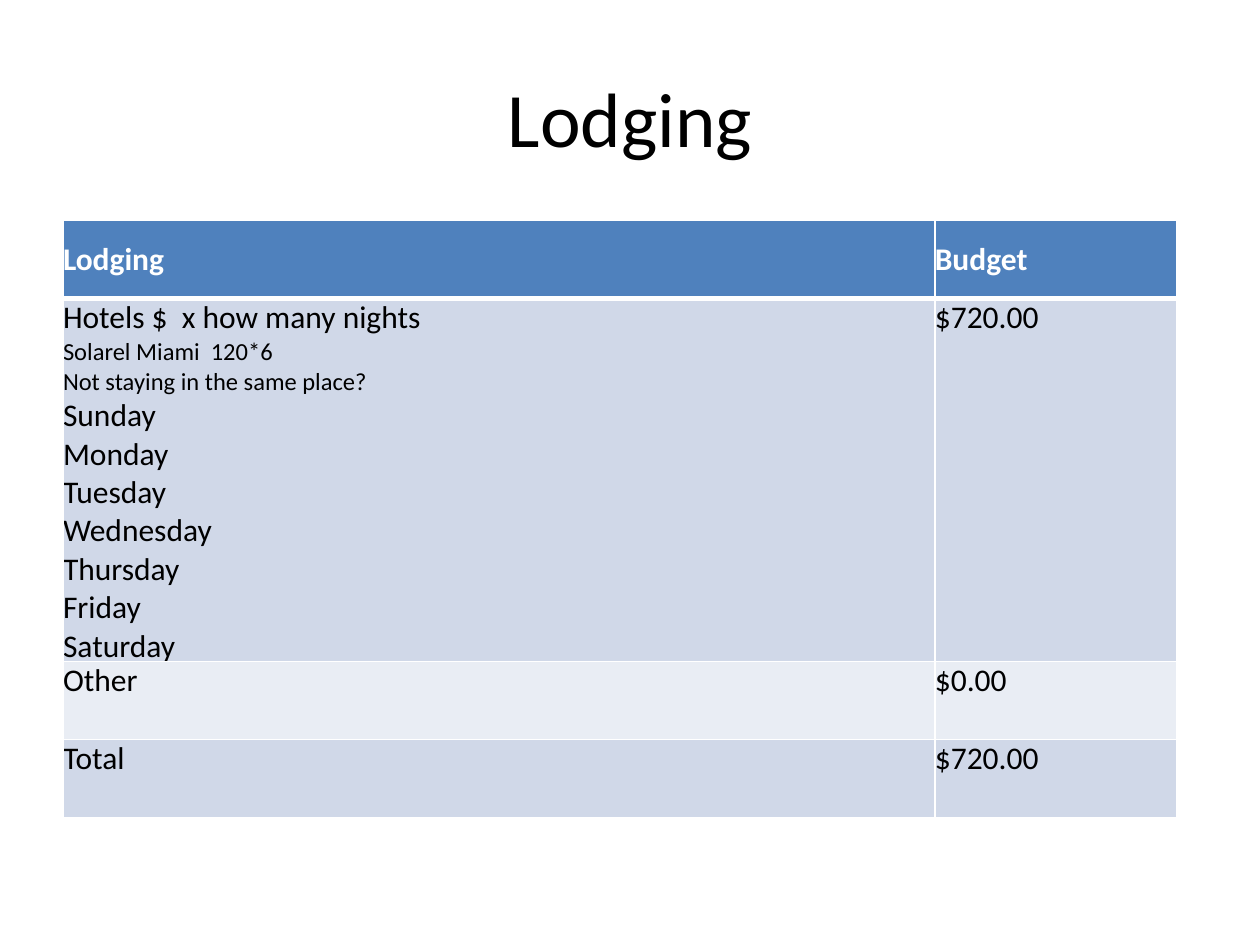
import dataclasses
import typing

import lxml.etree
import pptx
import pptx.dml.color
import pptx.enum.text
import pptx.oxml.ns
import pptx.util

SLIDE_WIDTH = pptx.util.Inches(10)
SLIDE_HEIGHT = pptx.util.Inches(7.5)
COLUMN_WIDTHS = (6.92, 1.92)
ROW_HEIGHT = 0.62
DAYS = ("Sunday", "Monday", "Tuesday", "Wednesday", "Thursday", "Friday", "Saturday")
ANCHOR = pptx.enum.text.MSO_ANCHOR
ALIGN = pptx.enum.text.PP_ALIGN


@dataclasses.dataclass(frozen=True)
class Line:
    text: str
    size: float = 18
    color: str = "000000"
    bold: bool = False
    align: typing.Any = ALIGN.LEFT


@dataclasses.dataclass(frozen=True)
class BudgetRow:
    lodging: tuple[Line, ...]
    budget: Line
    fill: str
    height: float = ROW_HEIGHT
    anchor: typing.Any = ANCHOR.TOP
    top_border: float = 1
    bottom_border: float = 1


ROWS = (
    BudgetRow(
        (Line("Lodging", color="FFFFFF", bold=True),),
        Line("Budget", color="FFFFFF", bold=True),
        "4F81BD",
        anchor=ANCHOR.MIDDLE,
        bottom_border=3,
    ),
    BudgetRow(
        (
            Line("Hotels $  x how many nights"),
            Line("Solarel Miami  120*6", size=14),
            Line("Not staying in the same place?", size=14),
            *map(Line, DAYS),
        ),
        Line("$720.00"),
        "D0D8E8",
        height=2.88,
        top_border=3,
    ),
    BudgetRow((Line("Other"),), Line("$0.00"), "E9EDF4"),
    BudgetRow((Line("Total"),), Line("$720.00"), "D0D8E8"),
)


def rgb(value: str) -> pptx.dml.color.RGBColor:
    return pptx.dml.color.RGBColor.from_string(value)


def set_attributes(target: typing.Any, values: dict[str, typing.Any]) -> None:
    for name, value in values.items():
        setattr(target, name, value)


def write_lines(text_frame: typing.Any, lines: tuple[Line, ...]) -> None:
    for index, line in enumerate(lines):
        paragraph = text_frame.add_paragraph() if index else text_frame.paragraphs[0]
        paragraph.alignment = line.align
        run = paragraph.add_run()
        run.text = line.text
        set_attributes(
            run.font,
            {"name": "Calibri", "size": pptx.util.Pt(line.size), "bold": line.bold},
        )
        run.font.color.rgb = rgb(line.color)


def draw_title(slide: typing.Any, line: Line) -> None:
    shape = slide.shapes.add_textbox(
        int(SLIDE_WIDTH * 0.05),
        int(SLIDE_HEIGHT * 0.04),
        int(SLIDE_WIDTH * 0.9),
        pptx.util.Inches(1.25),
    )
    set_attributes(
        shape.text_frame, {"word_wrap": True, "vertical_anchor": ANCHOR.MIDDLE}
    )
    write_lines(shape.text_frame, (line,))


def set_borders(cell: typing.Any, widths: dict[str, float]) -> None:
    properties = cell._tc.get_or_add_tcPr()
    qualified = pptx.oxml.ns.qn
    for index, (side, width) in enumerate(widths.items()):
        border = lxml.etree.Element(
            qualified(f"a:ln{side}"), w=str(int(pptx.util.Pt(width)))
        )
        solid = lxml.etree.SubElement(border, qualified("a:solidFill"))
        lxml.etree.SubElement(solid, qualified("a:srgbClr"), val="FFFFFF")
        properties.insert(index, border)


def draw_cell(cell: typing.Any, lines: tuple[Line, ...], row: BudgetRow) -> None:
    margins = {f"margin_{side}": 0 for side in ("left", "top", "right", "bottom")}
    set_attributes(cell, {**margins, "vertical_anchor": row.anchor})
    cell.fill.solid()
    cell.fill.fore_color.rgb = rgb(row.fill)
    set_borders(cell, {"L": 1, "R": 1, "T": row.top_border, "B": row.bottom_border})
    write_lines(cell.text_frame, lines)


def draw_table(slide: typing.Any, rows: tuple[BudgetRow, ...]) -> None:
    table = slide.shapes.add_table(
        len(rows),
        len(COLUMN_WIDTHS),
        int(SLIDE_WIDTH * 0.05),
        pptx.util.Inches(1.75),
        pptx.util.Inches(sum(COLUMN_WIDTHS)),
        pptx.util.Inches(sum(row.height for row in rows)),
    ).table
    for column, width in zip(table.columns, COLUMN_WIDTHS):
        column.width = pptx.util.Inches(width)
    for table_row, row in zip(table.rows, rows):
        table_row.height = pptx.util.Inches(row.height)
        for cell, lines in zip(table_row.cells, (row.lodging, (row.budget,))):
            draw_cell(cell, lines, row)


def main() -> None:
    presentation = pptx.Presentation()
    set_attributes(
        presentation, {"slide_width": SLIDE_WIDTH, "slide_height": SLIDE_HEIGHT}
    )
    slide = presentation.slides.add_slide(presentation.slide_layouts[6])
    draw_title(slide, Line("Lodging", size=44, align=ALIGN.CENTER))
    draw_table(slide, ROWS)
    presentation.save("out.pptx")


if __name__ == "__main__":
    main()
